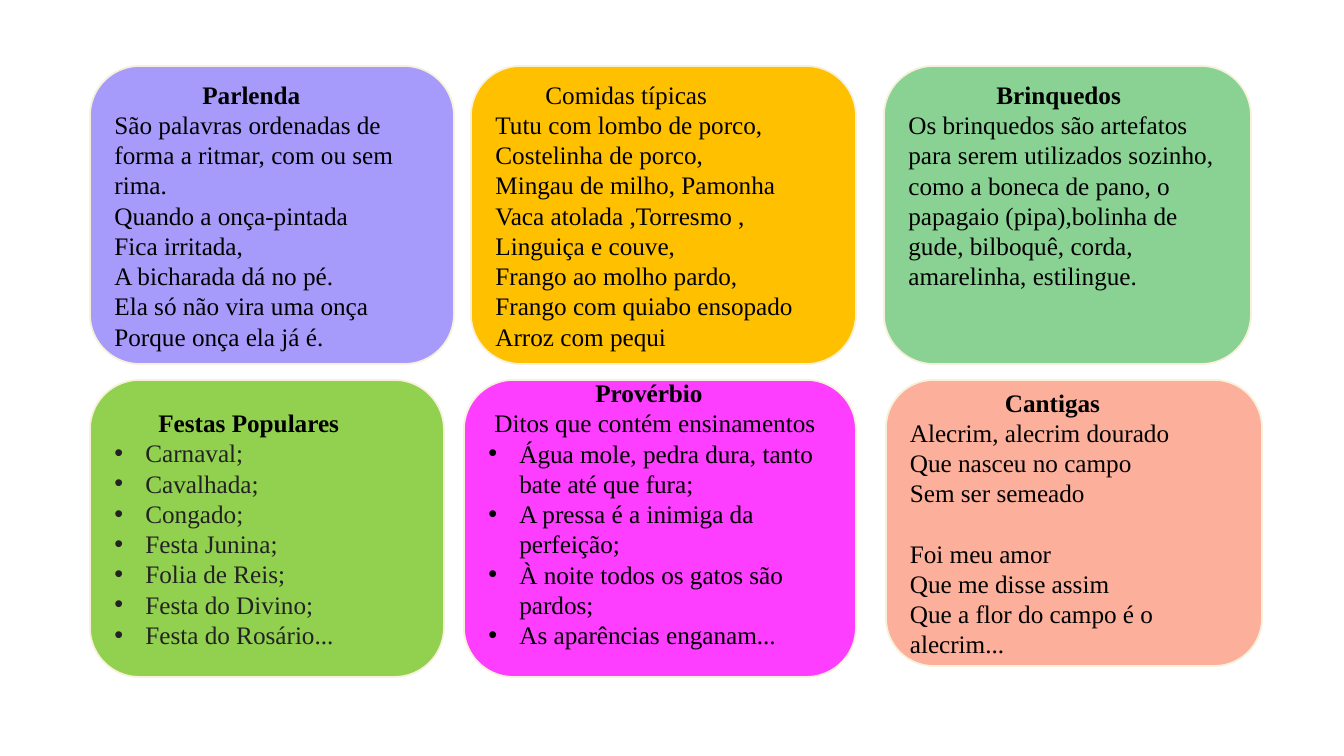
from lxml import etree
from pptx import Presentation
from pptx.dml.color import RGBColor
from pptx.enum.shapes import MSO_SHAPE
from pptx.enum.text import MSO_ANCHOR, PP_ALIGN
from pptx.oxml.ns import qn
from pptx.util import Pt

ROUND = MSO_SHAPE.ROUNDED_RECTANGLE
MIDDLE = MSO_ANCHOR.MIDDLE
LEFT = PP_ALIGN.LEFT
PX = 914400 / 100.8
HANG = 31


def color(code):
    return RGBColor.from_string(code)


def write(frame, text, bold=False, ink="000000", indent=0, bullet=False, gap=0):
    """Add one paragraph; indent and gap are in px."""
    first = frame.paragraphs[0]
    para = frame.add_paragraph() if first.runs else first
    props = para._p.get_or_add_pPr()
    if bullet:
        props.set("marL", str(round(HANG * PX)))
        indent = -HANG
        etree.SubElement(props, qn("a:buFont")).set("typeface", "Arial")
        etree.SubElement(props, qn("a:buChar")).set("char", "•")
    props.set("indent", str(round(indent * PX)))
    para.alignment = LEFT
    if gap:
        para.space_before = round(gap * PX)
    run = para.add_run()
    run.text = text
    run.font.name = "Times New Roman"
    run.font.size = Pt(18)
    run.font.bold = bold
    run.font.color.rgb = color(ink)


# Slide
deck = Presentation()
deck.slide_width = round(1344 * PX)
deck.slide_height = round(756 * PX)
slide = deck.slides.add_slide(deck.slide_layouts[6])

# Cards: box, fill, bottom inset, then (text, format) for each paragraph
HEAD = {"bold": True}
ITEM = {"bullet": True}
DARK = {"bullet": True, "ink": "222222"}
cards = [
    ((90, 66, 364, 298), "A69BFB", 0, [
        ("Parlenda", HEAD | {"indent": 88}),
        ("São palavras ordenadas de forma a ritmar, com ou sem rima.", {}),
        ("Quando a onça-pintada", {}),
        ("Fica irritada,", {}),
        ("A bicharada dá no pé.", {}),
        ("Ela só não vira uma onça", {}),
        ("Porque onça ela já é.", {}),
    ]),
    ((471, 66, 385, 298), "FFC000", 0, [
        ("Comidas típicas", {"indent": 50}),
        ("Tutu com lombo de porco,", {}),
        ("Costelinha de porco,", {}),
        ("Mingau de milho, Pamonha", {}),
        ("Vaca atolada ,Torresmo ,", {}),
        ("Linguiça e couve,", {}),
        ("Frango ao molho pardo,", {}),
        ("Frango com quiabo ensopado", {}),
        ("Arroz com pequi", {}),
    ]),
    ((884, 66, 367, 298), "8AD293", 60, [
        ("Brinquedos", HEAD | {"indent": 88}),
        ("Os brinquedos são artefatos para serem utilizados sozinho, "
         "como a boneca de pano, o papagaio (pipa),bolinha de gude, "
         "bilboquê, corda, amarelinha, estilingue.", {}),
    ]),
    ((90, 380, 354, 297), "92D050", 0, [
        ("Festas Populares", HEAD | {"indent": 44}),
        ("Carnaval;", DARK),
        ("Cavalhada;", DARK),
        ("Congado;", DARK),
        ("Festa Junina;", DARK),
        ("Folia de Reis;", DARK),
        ("Festa do Divino;", DARK),
        ("Festa do Rosário...", DARK),
    ]),
    ((464, 380, 392, 297), "FD3DFF", 30, [
        ("Provérbio", HEAD | {"indent": 107}),
        ("Ditos que contém ensinamentos", {"indent": 6}),
        ("Água mole, pedra dura, tanto bate até que fura;", ITEM),
        ("A pressa é a inimiga da perfeição;", ITEM),
        ("À noite todos os gatos são pardos;", ITEM),
        ("As aparências enganam...", ITEM),
    ]),
    ((886, 380, 376, 286), "FCAF9A", 0, [
        ("Cantigas", HEAD | {"indent": 95}),
        ("Alecrim, alecrim dourado", {}),
        ("Que nasceu no campo", {}),
        ("Sem ser semeado", {}),
        ("Foi meu amor", {"gap": 30}),
        ("Que me disse assim", {}),
        ("Que a flor do campo é o alecrim...", {}),
    ]),
]

for box, fill, inset, lines in cards:
    card = slide.shapes.add_shape(ROUND, *[round(n * PX) for n in box])
    card.shadow.inherit = False
    card.fill.solid()
    card.fill.fore_color.rgb = color(fill)
    card.line.color.rgb = color("F7F0DA")
    card.line.width = Pt(1.25)
    frame = card.text_frame
    frame.word_wrap = True
    frame.vertical_anchor = MIDDLE
    frame.margin_top = 0
    frame.margin_bottom = round(inset * PX)
    for text, look in lines:
        write(frame, text, **look)

deck.save("out.pptx")
